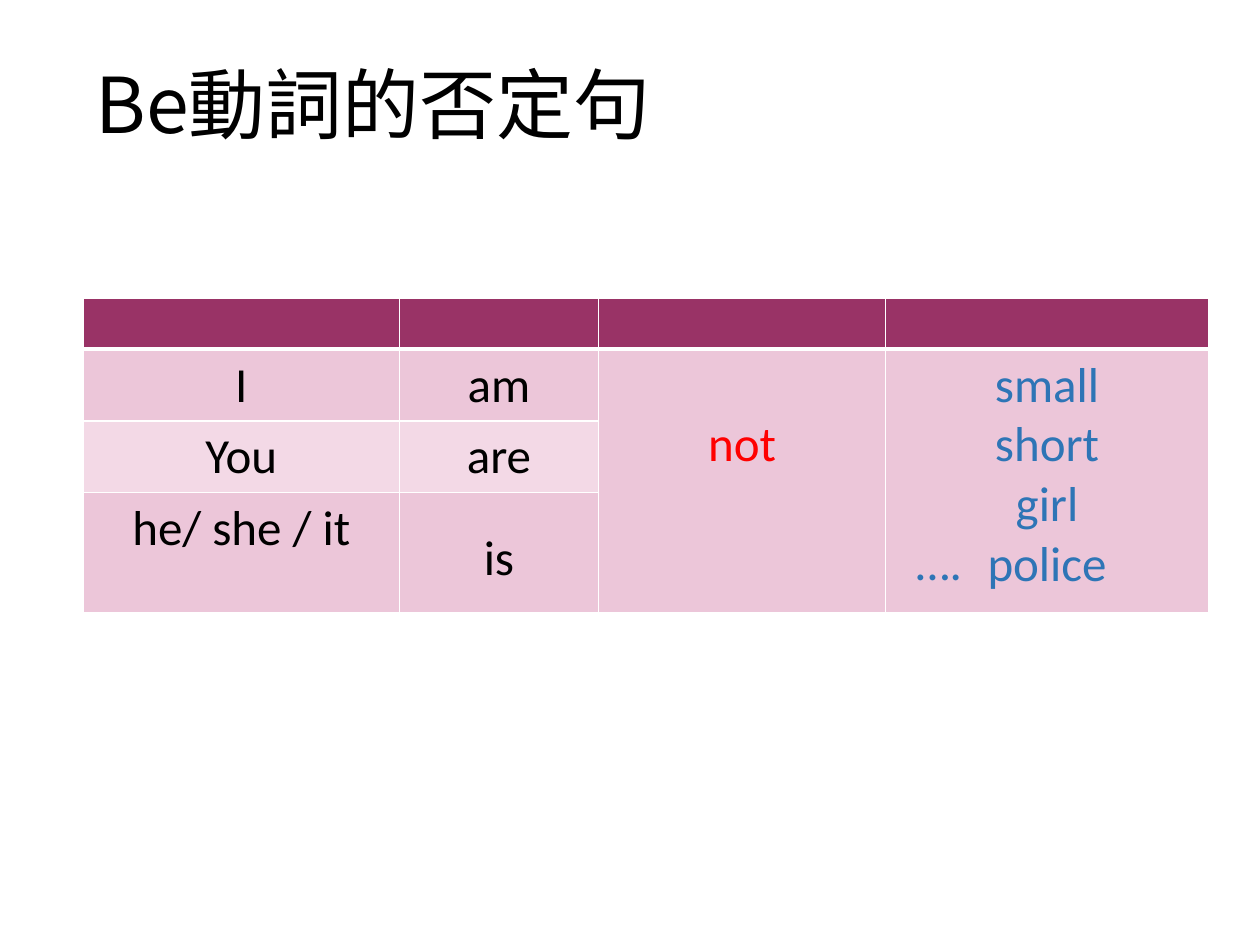
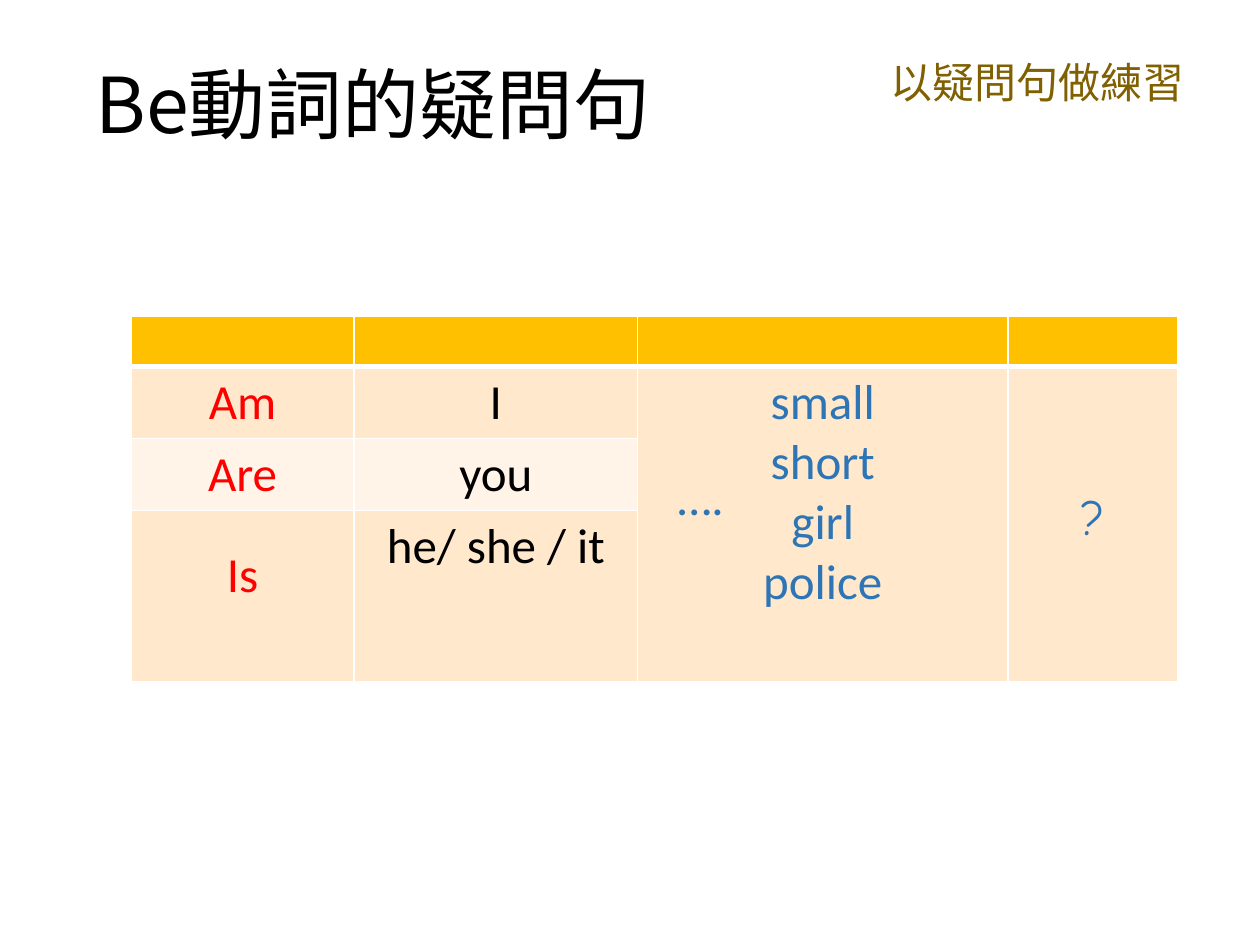
from lxml import etree
from pptx import Presentation
from pptx.dml.color import RGBColor
from pptx.enum.text import MSO_ANCHOR, MSO_AUTO_SIZE, PP_ALIGN
from pptx.oxml.ns import qn
from pptx.util import Inches, Pt

LATIN, CHINESE, COMIC = "Calibri", "Noto Sans CJK JP", "Comic Neue"
BLACK, WHITE, RED, BLUE, BROWN = "000000", "FFFFFF", "FF0000", "2E75B6", "806000"
BODY_SIZE = 28
CELL_MARGIN = 0.05
LINE = 0.47  # height of one body line, in inches
HALF_LINE = LINE / 2
EXAMPLES = "small\nshort\ngirl\npolice"

# Each cell is (text, colour, font, inches the text is lowered).
# Columns with a single entry span all body rows.
SLIDES = [
    {
        "title": "Be動詞的否定句",
        "place": (0.66, 2.37),
        "widths": [2.51, 1.58, 2.28, 2.56],
        "heights": [0.4, 0.57, 0.57, 0.95],
        "header": "993366",
        "bands": ["ECC6D9", "F3D9E6"],
        "columns": [
            [("I", BLACK, LATIN, 0), ("You", BLACK, LATIN, 0), ("he/ she / it", BLACK, LATIN, 0)],
            [("am", BLACK, LATIN, 0), ("are", BLACK, LATIN, 0), ("is", BLACK, LATIN, HALF_LINE)],
            [("not", RED, LATIN, LINE)],
            [(EXAMPLES, BLUE, LATIN, 0)],
        ],
        "dots": (7.17, 4.17),
    },
    {
        "title": "Be動詞的疑問句",
        "hint": "以疑問句做練習",
        "place": (1.04, 2.51),
        "widths": [1.77, 2.25, 2.94, 1.35],
        "heights": [0.4, 0.57, 0.57, 1.36],
        "header": "FFC000",
        "bands": ["FFE8CC", "FFF4E7"],
        "columns": [
            [("Am", RED, LATIN, 0), ("Are", RED, LATIN, 0), ("Is", RED, LATIN, HALF_LINE)],
            [("I", BLACK, LATIN, 0), ("you", BLACK, LATIN, 0), ("he/ she / it", BLACK, LATIN, 0)],
            [(EXAMPLES, BLUE, LATIN, 0)],
            [("?", BLUE, COMIC, 2 * LINE)],
        ],
        "dots": (5.28, 3.65),
    },
]


def color(hex_string):
    return RGBColor.from_string(hex_string)


def format_runs(paragraph, size, hex_string, font):
    for run in paragraph.runs:
        run.font.size = Pt(size)
        run.font.name = font
        run.font.color.rgb = color(hex_string)
        east_asian = etree.SubElement(run._r.get_or_add_rPr(), qn("a:ea"))
        east_asian.set("typeface", font)


def add_text(slide, text, box, size, hex_string, font, wrap=True):
    shape = slide.shapes.add_textbox(*map(Inches, box))
    text_frame = shape.text_frame
    text_frame.text = text
    text_frame.word_wrap = wrap
    format_runs(text_frame.paragraphs[0], size, hex_string, font)
    return text_frame


def add_borders(cell, widths):
    """Draw white cell borders; widths maps L, R, T, B (in that order) to points."""
    properties = cell._tc.get_or_add_tcPr()
    for side, width in widths.items():
        line = etree.SubElement(properties, qn(f"a:ln{side}"), w=str(Pt(width)))
        fill = etree.SubElement(line, qn("a:solidFill"))
        etree.SubElement(fill, qn("a:srgbClr"), val=WHITE)


def write_cell(cell, text, hex_string, font, lowered):
    cell.text_frame.text = text
    cell.margin_top = Inches(CELL_MARGIN + lowered)
    for paragraph in cell.text_frame.paragraphs:
        paragraph.alignment = PP_ALIGN.CENTER
        format_runs(paragraph, BODY_SIZE, hex_string, font)


def add_sentence_table(slide, content):
    widths, heights = content["widths"], content["heights"]
    box = (*content["place"], sum(widths), sum(heights))
    table = slide.shapes.add_table(len(heights), len(widths), *map(Inches, box)).table
    for column, width in zip(table.columns, widths):
        column.width = Inches(width)
    for row, height in zip(table.rows, heights):
        row.height = Inches(height)

    fills = [content["header"]] + [content["bands"][i % 2] for i in range(len(heights) - 1)]
    for row_index, fill in enumerate(fills):
        for column_index in range(len(widths)):
            cell = table.cell(row_index, column_index)
            add_borders(cell, {"L": 1, "R": 1,
                               "T": 3 if row_index == 1 else 1,
                               "B": 3 if row_index == 0 else 1})
            cell.fill.solid()
            cell.fill.fore_color.rgb = color(fill)

    for column_index, entries in enumerate(content["columns"]):
        if len(entries) == 1:
            last_cell = table.cell(len(heights) - 1, column_index)
            table.cell(1, column_index).merge(last_cell)
        for row_index, entry in enumerate(entries, start=1):
            write_cell(table.cell(row_index, column_index), *entry)


def add_grammar_slide(presentation, content):
    slide = presentation.slides.add_slide(presentation.slide_layouts[6])
    title = add_text(slide, content["title"], (0.66, 0.4, 5.2, 0.93), 44, BLACK, CHINESE)
    title.vertical_anchor = MSO_ANCHOR.MIDDLE
    title.paragraphs[0].line_spacing = 0.9
    add_sentence_table(slide, content)
    if "hint" in content:
        add_text(slide, content["hint"], (6.97, 0.4, 2.68, 0.5), 24, BROWN, CHINESE)
    dots = add_text(slide, "….", (*content["dots"], 0.57, 0.57), BODY_SIZE, BLUE, LATIN, wrap=False)
    dots.auto_size = MSO_AUTO_SIZE.SHAPE_TO_FIT_TEXT


def main():
    presentation = Presentation()
    presentation.slide_width, presentation.slide_height = Inches(10), Inches(7.5)
    for content in SLIDES:
        add_grammar_slide(presentation, content)
    presentation.save("out.pptx")


if __name__ == "__main__":
    main()
